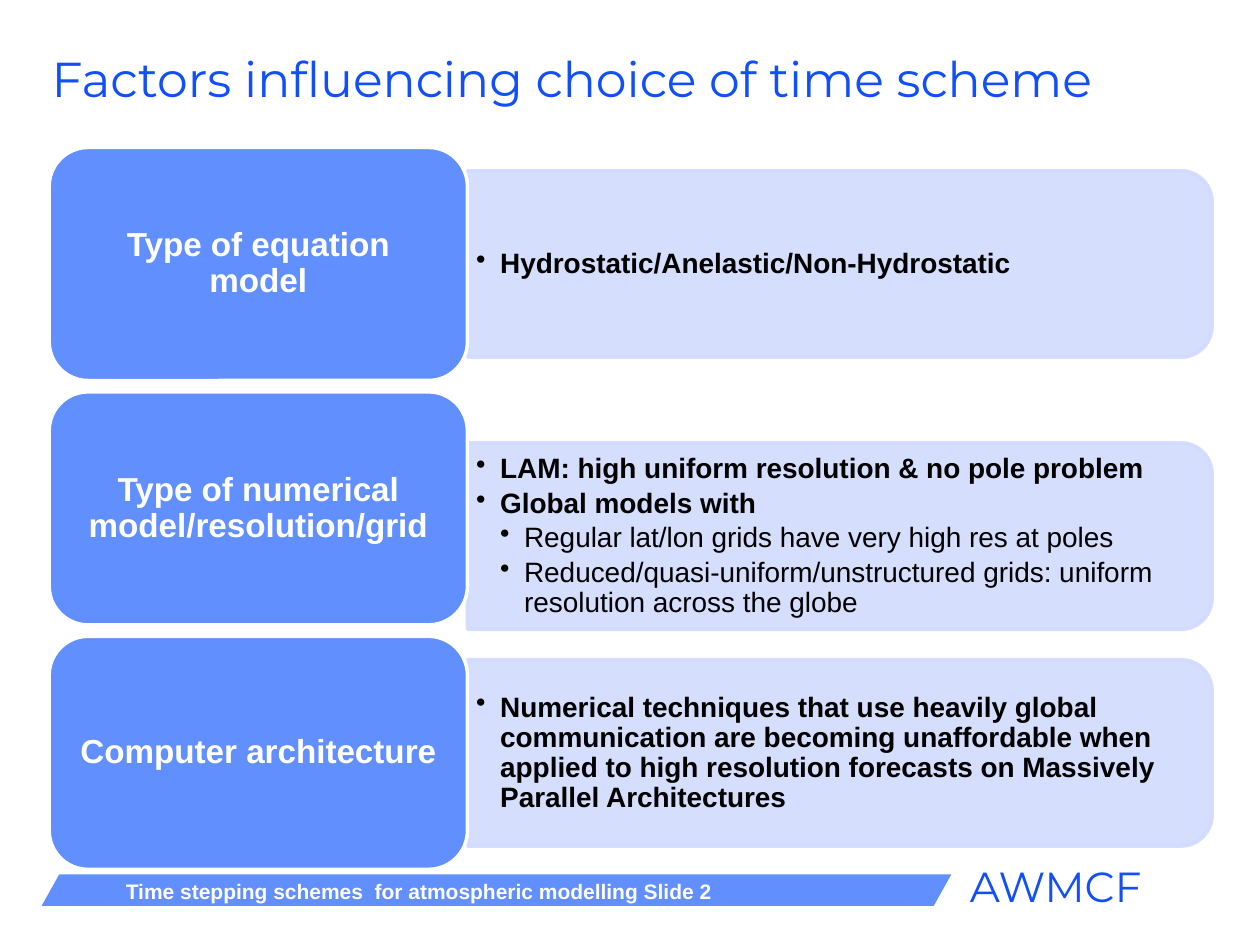
from lxml import etree
from pptx import Presentation
from pptx.dml.color import RGBColor
from pptx.enum.shapes import MSO_SHAPE
from pptx.enum.text import MSO_ANCHOR, PP_ALIGN
from pptx.oxml.ns import qn
from pptx.util import Pt

PX = 9144
BLUE = RGBColor(0x11, 0x4F, 0xFB)
CARD = RGBColor(0x61, 0x8F, 0xFD)
PANEL = RGBColor(0xD2, 0xDB, 0xFE)
WHITE = RGBColor(0xFF, 0xFF, 0xFF)
BLACK = RGBColor(0x00, 0x00, 0x00)
ROUND_RECT = MSO_SHAPE.ROUNDED_RECTANGLE
ROUND_SIDE = MSO_SHAPE.ROUND_2_SAME_RECTANGLE
PARALLELOGRAM = MSO_SHAPE.PARALLELOGRAM
MIDDLE = MSO_ANCHOR.MIDDLE
CENTER, LEFT = PP_ALIGN.CENTER, PP_ALIGN.LEFT

CARD_W, CARD_H, ROW_PITCH = 332, 185, 194
PANEL_W, PANEL_H = 591, 148
INDENT = 19

FACTORS = [
    ("Type of equation model", 0, [(1, "Hydrostatic/Anelastic/Non-Hydrostatic")]),
    ("Type of numerical model/resolution/grid", 22, [
        (1, "LAM: high uniform resolution & no pole problem"),
        (1, "Global models with"),
        (2, "Regular lat/lon grids have very high res at poles"),
        (2, "Reduced/quasi-uniform/unstructured grids: uniform resolution across the globe"),
    ]),
    ("Computer architecture", 0, [
        (1, "Numerical techniques that use heavily global communication are becoming "
            "unaffordable when applied to high resolution forecasts on Massively "
            "Parallel Architectures"),
    ]),
]


def px(*values):
    """Turn px lengths into EMU."""
    return [round(v * PX) for v in values]


def style(p, size, color, bold=False, font="Arial"):
    """Format every run of a paragraph."""
    for r in p.runs:
        r.font.size = Pt(size)
        r.font.name = font
        r.font.bold = bold
        r.font.color.rgb = color


def set_insets(tf, x, y):
    """Set the horizontal and vertical insets of a text frame."""
    tf.margin_left = tf.margin_right = x * PX
    tf.margin_top = tf.margin_bottom = y * PX


def add_filled(s, kind, box, fill, line=None):
    """Add a flat filled shape with an optional 2 pt outline."""
    sp = s.shapes.add_shape(kind, *px(*box))
    sp.shadow.inherit = False
    sp.fill.solid()
    sp.fill.fore_color.rgb = fill
    if line is None:
        sp.line.fill.background()
    else:
        sp.line.color.rgb = line
        sp.line.width = Pt(2)
    return sp


def add_label(s, box, text, size, color, bold=False, font="Arial"):
    """Add a single-line text box."""
    tf = s.shapes.add_textbox(*px(*box)).text_frame
    tf.word_wrap = False
    tf.text = text
    style(tf.paragraphs[0], size, color, bold, font)


def add_title(s, box, text):
    """Place and format the title placeholder."""
    title = s.shapes.title
    title.left, title.top, title.width, title.height = px(*box)
    tf = title.text_frame
    tf.text = text
    tf.vertical_anchor = MIDDLE
    p = tf.paragraphs[0]
    p.alignment = LEFT
    style(p, 28, BLUE, font="Montserrat")


def add_panel(s, x, center_y, points):
    """Add a panel rounded on its right side and its bulleted points."""
    center_x = x + PANEL_W / 2
    box = (center_x - PANEL_H / 2, center_y - PANEL_W / 2, PANEL_H, PANEL_W)
    sp = add_filled(s, ROUND_SIDE, box, PANEL, PANEL)
    sp.rotation = 90
    for clr in sp._element.spPr.iter(qn("a:srgbClr")):
        etree.SubElement(clr, qn("a:alpha"), val="90000")

    tf = s.shapes.add_textbox(*px(x, center_y - 66, PANEL_W - 8, 133)).text_frame
    tf.word_wrap = True
    tf.vertical_anchor = MIDDLE
    set_insets(tf, 7, 3)
    for i, (level, text) in enumerate(points):
        p = tf.paragraphs[0] if i == 0 else tf.add_paragraph()
        p.text = text
        p.level = level
        p.line_spacing = 0.9
        p.space_after = Pt(2.4)
        pPr = p._p.get_or_add_pPr()
        pPr.set("marL", str(level * INDENT * PX))
        pPr.set("indent", str(-INDENT * PX))
        etree.SubElement(pPr, qn("a:buChar"), char="•")
        style(p, 16, BLACK, bold=level == 1)


def add_factor(s, x, y, name, drop, points):
    """Add one row: a panel of points and the card that names it."""
    add_panel(s, x + CARD_W, y + CARD_H / 2 + drop, points)
    sp = add_filled(s, ROUND_RECT, (x, y, CARD_W, CARD_H), CARD, WHITE)
    tf = sp.text_frame
    tf.word_wrap = True
    tf.vertical_anchor = MIDDLE
    set_insets(tf, 12, 8)
    tf.text = name
    p = tf.paragraphs[0]
    p.alignment = CENTER
    p.line_spacing = 0.9
    style(p, 19, WHITE, bold=True)


def add_footer(s, x, y):
    """Add the slanted footer bar with its caption and the institute name."""
    bar = add_filled(s, PARALLELOGRAM, (x, y, 722, 25), CARD)
    bar.adjustments[0] = 0.56
    add_label(s, (x + 57, y - 2, 509, 30),
              "Time stepping schemes  for atmospheric modelling Slide 2", 12, WHITE, True)
    add_label(s, (x + 727, y - 16, 157, 57), "AWMCF", 24, BLUE, font="Montserrat")


def main():
    """Build and save the slide."""
    prs = Presentation()
    prs.slide_width, prs.slide_height = px(1000, 750)
    s = prs.slides.add_slide(prs.slide_layouts[5])
    add_footer(s, 33, 694)
    add_title(s, (31, 33, 934, 58), "Factors influencing choice of time scheme")
    for i, (name, drop, points) in enumerate(FACTORS):
        add_factor(s, 39, 117 + i * ROW_PITCH, name, drop, points)
    prs.save("out.pptx")


if __name__ == "__main__":
    main()
